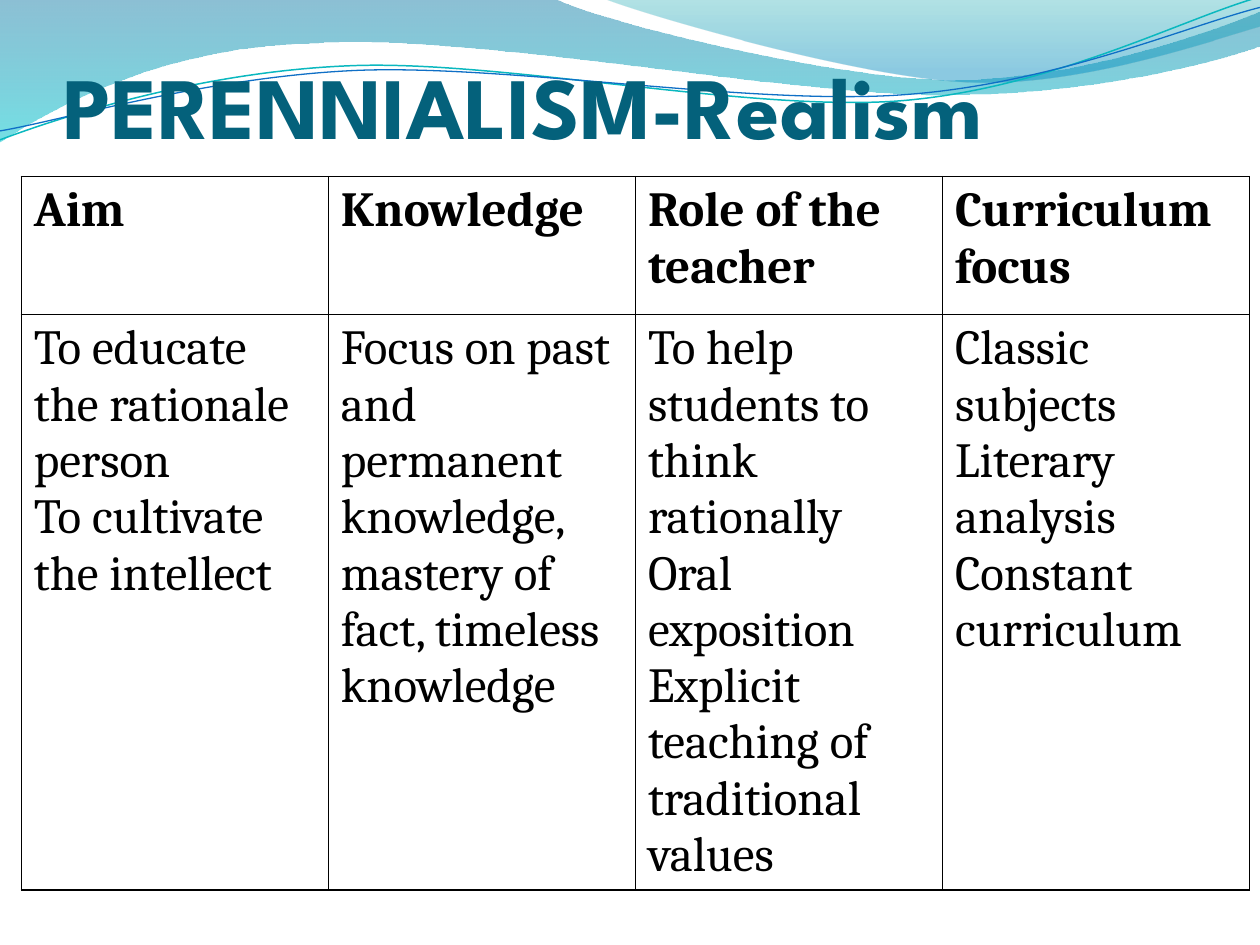
from lxml.etree import SubElement
from pptx import Presentation
from pptx.dml.color import RGBColor
from pptx.enum.text import MSO_ANCHOR, MSO_AUTO_SIZE, PP_ALIGN
from pptx.oxml import parse_xml
from pptx.oxml.ns import nsdecls, qn
from pptx.util import Cm, Pt

HUES = {
    "title": "04617B", "text": "000000", "border": "000000",
    "teal": "0AB8BF", "blue": "0F6FC6",
    "deep": "0074A1", "cyan": "00C6CF", "sea": "00A1A9", "sky": "008BBF",
}

# Each outline is a start point, then lines (x, y) and cubic curves (six numbers), in cm.
WAVES = [
    ([(0, 0), (11.18, -0.03), (12.09, 0.43, 16.87, 1.6, 19.25, 1.6),
      (21.67, 1.6, 24.33, 0.66, 25.4, 0.23), (25.43, 0.91),
      (24.97, 1.12, 22.1, 1.93, 18.95, 1.91),
      (15.8, 1.91, 9.7, 0.71, 6.53, 0.86),
      (3.28, 0.91, 1.17, 2.11, -0.03, 2.87)],
     [(0, "deep", 45), (100, "cyan", 55)]),
    ([(12.17, -0.03), (12.93, 0.28, 17.32, 1.57, 19.53, 1.65),
      (21.74, 1.75, 24.41, 0.81, 25.4, 0.53), (25.4, 0)],
     [(0, "sea", 30), (80, "sky", 45)]),
]
STRANDS = [
    ([(-0.05, 2.22), (1.19, 1.82, 4.02, 1.04, 7.05, 1.06),
      (10.05, 1.07, 15.02, 2.37, 18.08, 2.29),
      (21.13, 2.2, 23.87, 0.91, 25.41, 0.55)], "teal", 0.85),
    ([(-0.04, 2.04), (1.16, 1.9, 4.18, 1.15, 7.2, 1.16),
      (10.25, 1.18, 15.13, 2.25, 18.18, 2.17),
      (21.21, 2.1, 23.93, 1.06, 25.45, 0.75)], "blue", 0.75),
]
TILT = -2.7

ROWS = [
    ["Aim", "Knowledge", "Role of the teacher", "Curriculum focus"],
    ["To educate the rationale person\nTo cultivate the intellect",
     "Focus on past and permanent knowledge, mastery of fact, timeless knowledge",
     "To help students to think rationally\nOral exposition\n"
     "Explicit teaching of traditional values",
     "Classic subjects\nLiterary analysis\nConstant curriculum"],
]
HEIGHTS = [2.78, 11.23]
COL = 6.19


def color(name):
    return RGBColor.from_string(HUES[name])


def add_path(slide, path, close):
    """Draw all points as a freeform, then join each curve's three into one cubic segment."""
    points = [(Cm(seg[i]), Cm(seg[i + 1])) for seg in path for i in range(0, len(seg), 2)]
    pen = slide.shapes.build_freeform(*points[0])
    pen.add_line_segments(points[1:], close=close)
    shape = pen.convert_to_shape()
    shape.shadow.inherit = False
    lines = iter(list(shape.element.iter(qn("a:lnTo"))))
    for seg in path[1:]:
        first = next(lines)
        if len(seg) == 6:
            curve = parse_xml(f'<a:cubicBezTo {nsdecls("a")}/>')
            first.addprevious(curve)
            for line in (first, next(lines), next(lines)):
                curve.append(line[0])
                line.getparent().remove(line)
    return shape


def add_wave(slide, path, stops):
    shape = add_path(slide, path, True)
    shape.line.fill.background()
    marks = "".join(
        f'<a:gs pos="{pos * 1000}"><a:srgbClr val="{HUES[hue]}">'
        f'<a:alpha val="{alpha * 1000}"/></a:srgbClr></a:gs>'
        for pos, hue, alpha in stops)
    grad = parse_xml(f'<a:gradFill {nsdecls("a")} rotWithShape="1"><a:gsLst>{marks}</a:gsLst>'
                     '<a:lin ang="5400000" scaled="0"/></a:gradFill>')
    shape.element.spPr.find(qn("a:custGeom")).addnext(grad)


def add_strand(slide, path, hue, width):
    shape = add_path(slide, path, False)
    shape.rotation = TILT
    shape.fill.background()
    shape.line.color.rgb = color(hue)
    shape.line.width = Pt(width)


def style(frame, font, size, hue, bold):
    for para in frame.paragraphs:
        for run in para.runs:
            run.font.name = font
            run.font.size = Pt(size)
            run.font.bold = bold
            run.font.color.rgb = color(hue)


def set_title(slide, text):
    title = slide.shapes.title
    title.left, title.top, title.width, title.height = Cm(1.27), Cm(0.63), Cm(22.86), Cm(2.54)
    frame = title.text_frame
    frame.text = text
    frame.word_wrap = True
    frame.auto_size = MSO_AUTO_SIZE.NONE
    frame.vertical_anchor = MSO_ANCHOR.BOTTOM
    frame.margin_left = frame.margin_right = frame.margin_bottom = 0
    frame.margin_top = Cm(0.13)
    frame.paragraphs[0].alignment = PP_ALIGN.LEFT
    style(frame, "League Spartan", 50, "title", True)
    slide.shapes.element.append(title.element)  # in front of the waves


def add_border(cell):
    props = cell._tc.get_or_add_tcPr()
    for side in ("lnL", "lnR", "lnT", "lnB"):
        line = SubElement(props, qn(f"a:{side}"), w=str(Pt(1)))
        fill = SubElement(line, qn("a:solidFill"))
        SubElement(fill, qn("a:srgbClr"), val=HUES["border"])


def add_grid(slide):
    cols = len(ROWS[0])
    table = slide.shapes.add_table(len(ROWS), cols, Cm(0.43), Cm(3.56),
                                   Cm(COL * cols), Cm(sum(HEIGHTS))).table
    table.first_row = table.horz_banding = False
    for col in table.columns:
        col.width = Cm(COL)
    for r, texts in enumerate(ROWS):
        table.rows[r].height = Cm(HEIGHTS[r])
        for c, text in enumerate(texts):
            cell = table.cell(r, c)
            cell.text_frame.text = text
            style(cell.text_frame, "Cambria", 28, "text", r == 0)
            add_border(cell)
            cell.fill.background()


def main():
    deck = Presentation()
    deck.slide_width, deck.slide_height = Cm(25.4), Cm(19.05)
    slide = deck.slides.add_slide(deck.slide_layouts[5])
    for path, stops in WAVES:
        add_wave(slide, path, stops)
    for path, hue, width in STRANDS:
        add_strand(slide, path, hue, width)
    set_title(slide, "PERENNIALISM-Realism")
    add_grid(slide)
    deck.save("out.pptx")


if __name__ == "__main__":
    main()
